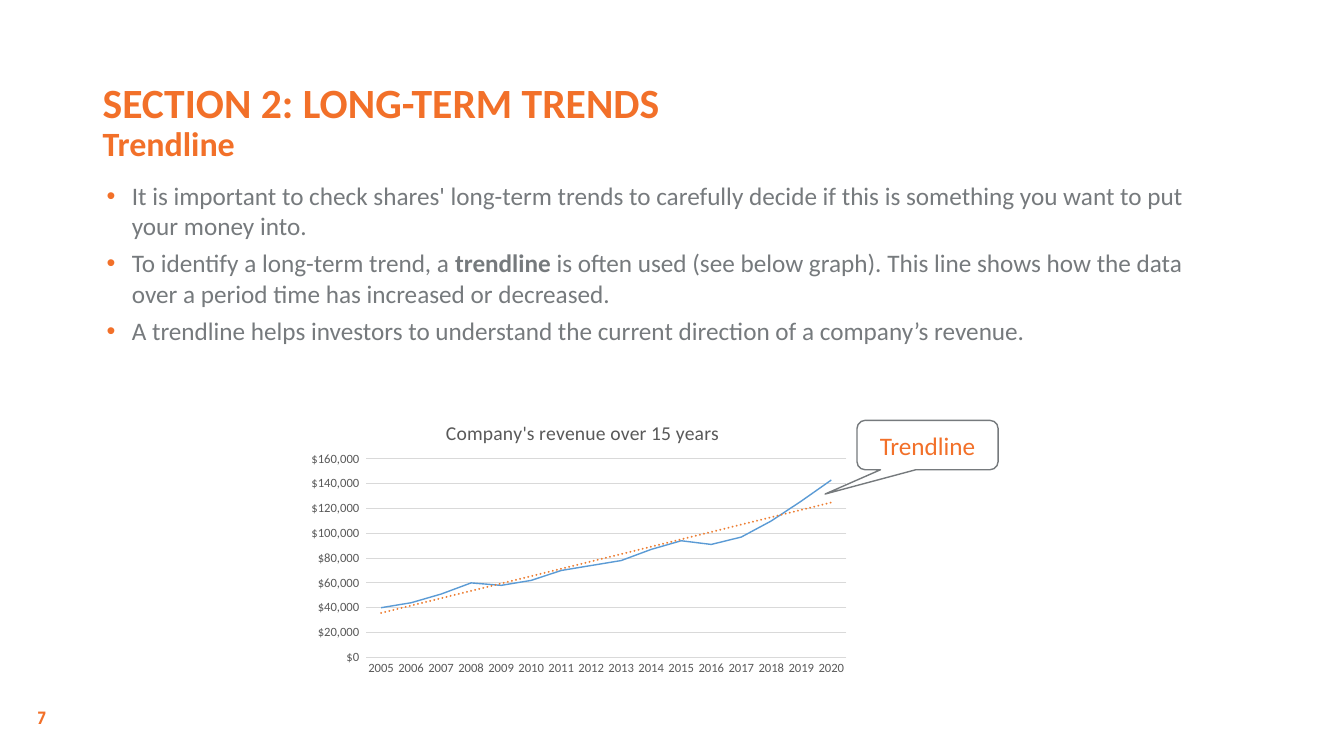
import pptx
import pptx.chart.data
import pptx.dml.color
import pptx.enum.chart
import pptx.enum.shapes
import pptx.enum.text
import pptx.oxml
import pptx.oxml.ns
import pptx.util
from pptx.util import Inches, Pt

THEME = {
    "orange": "F27029", "grey": "767A7D", "label": "595959", "rule": "D9D9D9",
    "blue": "5B9BD5", "trend": "ED7D31",
    "font": "Calibri", "number_font": "TeX Gyre Adventor",
    "heading": 29.7, "subheading": 24.3, "body": 18, "chart_title": 14,
    "axis": 9, "page": 12,
}

HEADING = "SECTION 2: LONG-TERM TRENDS"
SUBHEADING = "Trendline"
BULLETS = [
    [("It is important to check shares' long-term trends to carefully decide if this is "
      "something you want to put your money into.", False)],
    [("To identify a long-term trend, a ", False), ("trendline", True),
     (" is often used (see below graph). This line shows how the data over a period time "
      "has increased or decreased.", False)],
    [("A trendline helps investors to understand the current direction of a company’s "
      "revenue.", False)],
]
CALLOUT = "Trendline"
PAGE = "7"
CHART_TITLE = "Company's revenue over 15 years"
YEARS = [str(year) for year in range(2005, 2021)]
REVENUE = [40000, 44000, 51000, 60000, 58000, 62000, 70000, 74000,
           78000, 87000, 94000, 91000, 97000, 110000, 126000, 143000]

BOXES = {
    "body": (0.46, 1.74, 11.5, 4.44),
    "page": (0.27, 6.97, 3, 0.33),
    "title": (0.92, 0.77, 11.5, 0.91),
    "callout": (8.5, 4.17, 1.4, 0.49),
    "chart": (2.98, 3.96, 5.52, 2.8),
}
CALLOUT_SHAPE = (-0.726, 0.992, 0.167)
PLOT_LAYOUT = {"x": 0.118, "y": 0.212, "w": 0.863, "h": 0.703}
TITLE_LAYOUT = {"x": 0.255, "y": 0.06}
NS = pptx.oxml.ns.nsdecls("c", "a")


def rgb(name):
    return pptx.dml.color.RGBColor.from_string(THEME[name])


def apply(obj, values):
    for name, value in values.items():
        setattr(obj, name, value)


def style(font, size, color, bold=False, face="font"):
    apply(font, {"name": THEME[face], "size": Pt(THEME[size]), "bold": bold})
    font.color.rgb = rgb(color)


def add_run(p, text, *look):
    r = p.add_run()
    r.text = text
    style(r.font, *look)


def box(name):
    return [Inches(v) for v in BOXES[name]]


def text_box(s, name):
    tf = s.shapes.add_textbox(*box(name)).text_frame
    tf.word_wrap = True
    return tf


def add_bullet(p):
    pPr = p._p.get_or_add_pPr()
    apply(pPr, {"lvl": 1})
    pPr.set("marL", str(Inches(0.75)))
    pPr.set("indent", str(Inches(-0.25)))
    ns = pptx.oxml.ns.nsdecls("a")
    for xml in (f'<a:buClr {ns}><a:srgbClr val="{THEME["orange"]}"/></a:buClr>',
                f'<a:buFont {ns} typeface="Arial"/>', f'<a:buChar {ns} char="•"/>'):
        pPr.append(pptx.oxml.parse_xml(xml))


def place(element, index, fractions, inner=False):
    old = element.find(pptx.oxml.ns.qn("c:layout"))
    if old is not None:
        element.remove(old)
    target = '<c:layoutTarget val="inner"/>' if inner else ""
    modes = "".join(f'<c:{k}Mode val="edge"/>' for k in "xy")
    sizes = "".join(f'<c:{k} val="{v}"/>' for k, v in fractions.items())
    element.insert(index, pptx.oxml.parse_xml(
        f"<c:layout {NS}><c:manualLayout>{target}{modes}{sizes}</c:manualLayout></c:layout>"))


def add_text(s):
    tf = text_box(s, "body")
    for i, runs in enumerate(BULLETS):
        p = tf.add_paragraph() if i else tf.paragraphs[0]
        add_bullet(p)
        if i:
            p.space_before = Pt(5)
        for text, bold in runs:
            add_run(p, text, "body", "grey", bold)

    add_run(text_box(s, "page").paragraphs[0], PAGE, "page", "orange", True, "number_font")

    tf = text_box(s, "title")
    tf.vertical_anchor = pptx.enum.text.MSO_ANCHOR.MIDDLE
    p = tf.paragraphs[0]
    p.line_spacing = 0.9
    add_run(p, HEADING, "heading", "orange", True)
    p.add_line_break()
    add_run(p, SUBHEADING, "subheading", "orange", True)


def add_callout(s):
    kind = pptx.enum.shapes.MSO_SHAPE.ROUNDED_RECTANGULAR_CALLOUT
    sp = s.shapes.add_shape(kind, *box("callout"))
    for i, value in enumerate(CALLOUT_SHAPE):
        sp.adjustments[i] = value
    sp.shadow.inherit = False
    sp.fill.background()
    sp.line.color.rgb = rgb("grey")
    sp.line.width = Pt(1)
    tf = sp.text_frame
    tf.vertical_anchor = pptx.enum.text.MSO_ANCHOR.MIDDLE
    p = tf.paragraphs[0]
    p.alignment = pptx.enum.text.PP_ALIGN.CENTER
    add_run(p, CALLOUT, "body", "orange")


def add_revenue_chart(s):
    data = pptx.chart.data.CategoryChartData()
    data.categories = YEARS
    data.add_series("Series 1", REVENUE)
    chart = s.shapes.add_chart(pptx.enum.chart.XL_CHART_TYPE.LINE, *box("chart"), data).chart
    style(chart.font, "axis", "label")
    apply(chart, {"has_legend": False, "has_title": True})
    p = chart.chart_title.text_frame.paragraphs[0]
    add_run(p, CHART_TITLE, "chart_title", "label")
    place(chart.chart_title._element, 1, TITLE_LAYOUT)

    for axis in (chart.category_axis, chart.value_axis):
        none = pptx.enum.chart.XL_TICK_MARK.NONE
        apply(axis, {"major_tick_mark": none, "minor_tick_mark": none})
        style(axis.tick_labels.font, "axis", "label")
    values = chart.value_axis
    apply(values, {"minimum_scale": 0, "maximum_scale": 160000, "major_unit": 20000,
                   "has_major_gridlines": True})
    apply(values.tick_labels, {"number_format": '"$"#,##0_);[Red]\\("$"#,##0\\)',
                               "number_format_is_linked": False})
    values.format.line.fill.background()

    plot = chart.plots[0]
    plot.vary_by_categories = False
    series = plot.series[0]
    series.smooth = False
    series.marker.style = pptx.enum.chart.XL_MARKER_STYLE.NONE
    for line, color, width in ((chart.category_axis.format.line, "rule", 0.75),
                               (values.major_gridlines.format.line, "rule", 0.75),
                               (series.format.line, "blue", 1)):
        line.color.rgb = rgb(color)
        line.width = Pt(width)

    trend = pptx.oxml.parse_xml(
        f'<c:trendline {NS}><c:spPr><a:ln w="{Pt(1.5)}" cap="rnd"><a:solidFill>'
        f'<a:srgbClr val="{THEME["trend"]}"/></a:solidFill><a:prstDash val="sysDot"/></a:ln>'
        '</c:spPr><c:trendlineType val="linear"/><c:dispRSqr val="0"/><c:dispEq val="0"/>'
        '</c:trendline>')
    series._element.find(pptx.oxml.ns.qn("c:cat")).addprevious(trend)
    place(plot._element.getparent(), 0, PLOT_LAYOUT, inner=True)


def main():
    prs = pptx.Presentation()
    apply(prs, {"slide_width": Inches(13.33), "slide_height": Inches(7.5)})
    s = prs.slides.add_slide(prs.slide_layouts[6])
    add_text(s)
    add_callout(s)
    add_revenue_chart(s)
    prs.save("out.pptx")


if __name__ == "__main__":
    main()
